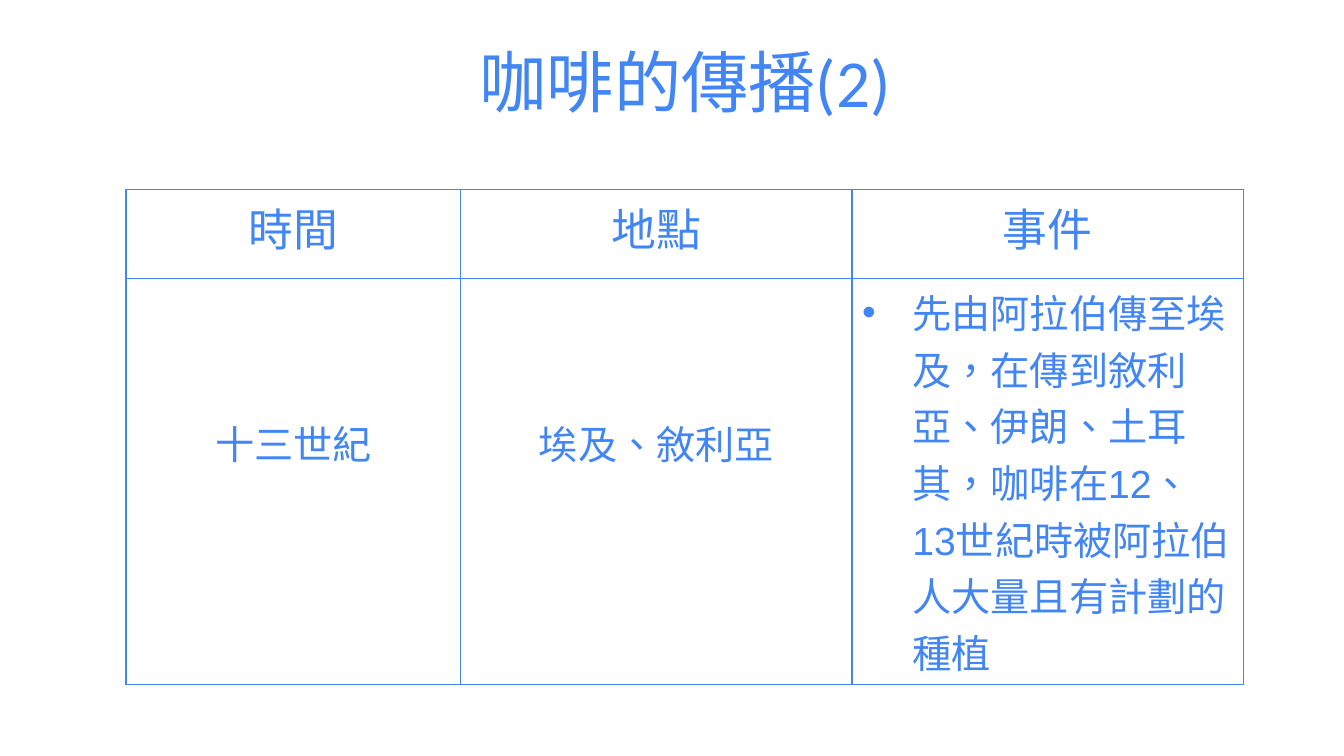
"""Build a slide with a table on the spread of coffee."""
import pptx
import pptx.dml.color
import pptx.enum.lang
import pptx.enum.text
import pptx.oxml
import pptx.oxml.ns
import pptx.util

Inches = pptx.util.Inches
Pt = pptx.util.Pt
ALIGN = pptx.enum.text.PP_ALIGN
ANCHOR = pptx.enum.text.MSO_ANCHOR
NS = pptx.oxml.ns.nsdecls("a")


def color(value):
    return pptx.dml.color.RGBColor.from_string(value)


class Deck:
    blue = "4285F4"
    title_font = "Calibri"
    body_font = "Arial"
    language = pptx.enum.lang.MSO_LANGUAGE_ID.TRADITIONAL_CHINESE

    def __init__(self, width, height):
        self.prs = pptx.Presentation()
        self.prs.slide_width = Inches(width)
        self.prs.slide_height = Inches(height)
        self.slide = self.prs.slides.add_slide(self.prs.slide_layouts[5])

    def format(self, p, size, font, align):
        p.alignment = align
        p._p.get_or_add_pPr().set("hangingPunct", "0")
        for r in p.runs:
            r.font.size = Pt(size)
            r.font.name = font
            r.font.language_id = self.language
            r.font.color.rgb = color(self.blue)

    def title(self, text, left, top, width, height):
        sp = self.slide.shapes.title
        sp.left, sp.top = Inches(left), Inches(top)
        sp.width, sp.height = Inches(width), Inches(height)
        tf = sp.text_frame
        tf.text = text
        tf.word_wrap = True
        tf.auto_size = pptx.enum.text.MSO_AUTO_SIZE.NONE
        tf.vertical_anchor = ANCHOR.BOTTOM
        p = tf.paragraphs[0]
        p.line_spacing = 0.85
        self.format(p, 48, self.title_font, ALIGN.CENTER)

    def table(self, left, top, widths, heights):
        frame = self.slide.shapes.add_table(
            len(heights), len(widths), Inches(left), Inches(top),
            Inches(sum(widths)), Inches(sum(heights)))
        table = frame.table
        table.first_row = table.horz_banding = False
        for column, width in zip(table.columns, widths):
            column.width = Inches(width)
        for row, height in zip(table.rows, heights):
            row.height = Inches(height)
        return table

    def cell(self, cell, text, size, align=ALIGN.CENTER, margin_top=0.05):
        cell.text_frame.text = text
        cell.vertical_anchor = ANCHOR.TOP
        cell.margin_left = cell.margin_right = Inches(0.1)
        cell.margin_top, cell.margin_bottom = Inches(margin_top), Inches(0.05)
        self.format(cell.text_frame.paragraphs[0], size, self.body_font, align)
        self.borders(cell)
        cell.fill.background()

    def borders(self, cell):
        tcPr = cell._tc.get_or_add_tcPr()
        for i, side in enumerate(("lnL", "lnR", "lnT", "lnB")):
            tcPr.insert(i, pptx.oxml.parse_xml(
                f'<a:{side} {NS} w="{Pt(1)}"><a:solidFill>'
                f'<a:srgbClr val="{self.blue}"/></a:solidFill></a:{side}>'))

    def bullet(self, p, indent):
        pPr = p._p.get_or_add_pPr()
        pPr.set("marL", str(Inches(indent)))
        pPr.set("indent", str(-Inches(indent)))
        for xml in (f'<a:buClr {NS}><a:srgbClr val="{self.blue}"/></a:buClr>',
                    f'<a:buFont {NS} typeface="{self.body_font}"/>',
                    f'<a:buChar {NS} char="•"/>'):
            pPr.append(pptx.oxml.parse_xml(xml))


def main():
    deck = Deck(13.33, 7.5)
    deck.title("咖啡的傳播(2)", 2.8, 0.31, 7.99, 0.94)
    table = deck.table(1.25, 1.88, (3.32, 3.88, 3.88), (0.88, 4.02))
    for col, heading in enumerate(("時間", "地點", "事件")):
        deck.cell(table.cell(0, col), heading, 32)
    for col, text in enumerate(("十三世紀", "埃及、敘利亞")):
        deck.cell(table.cell(1, col), text, 28, margin_top=1.35)
    event = table.cell(1, 2)
    deck.cell(event, "先由阿拉伯傳至埃及，在傳到敘利亞、伊朗、土耳其，"
              "咖啡在12、13世紀時被阿拉伯人大量且有計劃的種植", 28, ALIGN.LEFT)
    deck.bullet(event.text_frame.paragraphs[0], 0.5)
    deck.prs.save("out.pptx")


if __name__ == "__main__":
    main()
